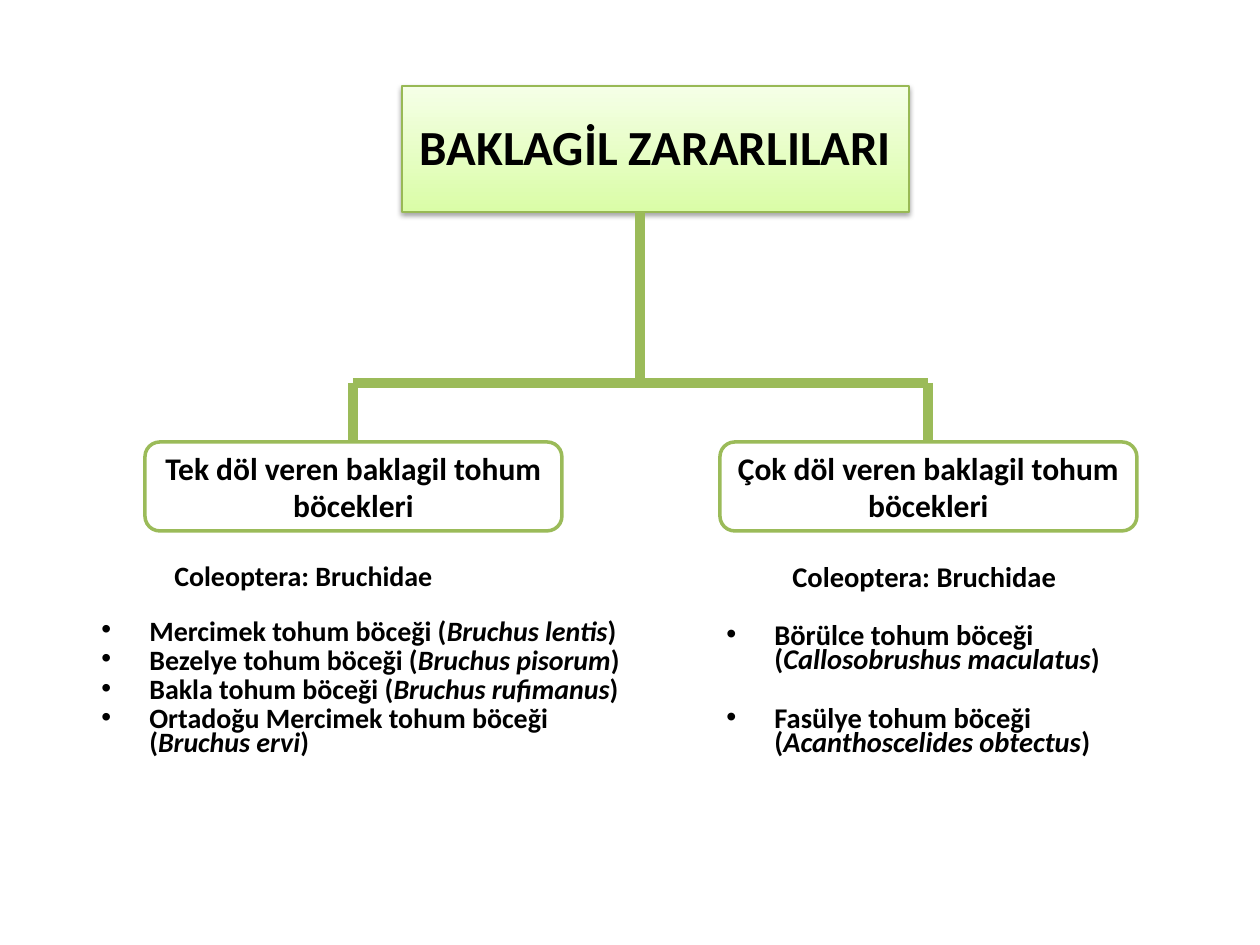
"""Builds a slide that sorts legume pests into two groups of seed beetles."""
from lxml import etree
from pptx import Presentation
from pptx import util as u
from pptx.dml.color import RGBColor
from pptx.enum import shapes, text
from pptx.oxml import ns

PX = 914400 // 126
FONT, BLACK, WHITE, GREEN = "Calibri", "000000", "FFFFFF", "9BBB59"
TITLE = "BAKLAGİL ZARARLILARI"
FAMILY = "Coleoptera: Bruchidae"
GROUPS = [
    {"name": "Tek döl veren baklagil tohum böcekleri",
     "center": 353, "list": (89, 562, 561, 268), "size": 16, "indent": 73,
     "first_gap": 17.7, "gap": 3.2,
     "pests": [("Mercimek tohum böceği", "Bruchus lentis"),
               ("Bezelye tohum böceği", "Bruchus pisorum"),
               ("Bakla tohum böceği", "Bruchus rufimanus"),
               ("Ortadoğu Mercimek tohum böceği", "Bruchus ervi")]},
    {"name": "Çok döl veren baklagil tohum böcekleri",
     "center": 928, "list": (714, 562, 501, 248), "size": 16.3, "indent": 66,
     "first_gap": 19.8, "gap": 19.8,
     "pests": [("Börülce tohum böceği", "Callosobrushus maculatus"),
               ("Fasülye tohum böceği", "Acanthoscelides obtectus")]},
]
FRAME = (402, 86, 507, 126)
TITLE_AREA = (402, 96, 507, 100)
TRUNK_X, BRANCH_Y = 640, 383
NAME_TOP, NAME_WIDTH, NAME_HEIGHT = 442, 417, 89
HANGING = 48


def px(*values):
    return [value * PX for value in values]


def color(value):
    return RGBColor.from_string(value)


def write(para, words, size, italic=False, align=None):
    span = para.add_run()
    span.text = words
    font = span.font
    font.name, font.size, font.bold, font.italic = FONT, u.Pt(size), True, italic
    font.color.rgb = color(BLACK)
    if align is not None:
        para.alignment = align


def add_effects(properties):
    return etree.SubElement(properties, ns.qn("a:effectLst"))


def add_frame(slide):
    frame = slide.shapes.add_shape(shapes.MSO_SHAPE.RECTANGLE, *px(*FRAME))
    frame.fill.gradient()
    frame.fill.gradient_angle = 90
    for stop, shade in zip(frame.fill.gradient_stops, ("DAFDA7", "F5FFE7")):
        stop.color.rgb = color(shade)
    for stop, position in zip(frame.fill.gradient_stops, (0, 1)):
        stop.position = position
    frame.line.color.rgb, frame.line.width = color("98B955"), u.Pt(0.75)
    shadow = etree.SubElement(add_effects(frame.element.spPr), ns.qn("a:outerShdw"),
                              blurRad=str(u.Pt(3.1)), dist=str(u.Pt(1.6)),
                              dir="5400000", rotWithShape="0")
    shade = etree.SubElement(shadow, ns.qn("a:srgbClr"), val=BLACK)
    etree.SubElement(shade, ns.qn("a:alpha"), val="38000")
    return frame


def add_title(slide):
    title = slide.shapes.title
    title.left, title.top, title.width, title.height = px(*TITLE_AREA)
    title.text_frame.auto_size = text.MSO_AUTO_SIZE.NONE
    title.text_frame.vertical_anchor = text.MSO_ANCHOR.MIDDLE
    write(title.text_frame.paragraphs[0], TITLE, 28, align=text.PP_ALIGN.CENTER)
    title.element.addprevious(add_frame(slide).element)


def add_line(slide, *ends):
    line = slide.shapes.add_connector(shapes.MSO_CONNECTOR.STRAIGHT, *px(*ends))
    line.line.color.rgb, line.line.width = color(GREEN), u.Pt(6)
    add_effects(line.element.spPr)


def add_name(slide, group):
    left = group["center"] - NAME_WIDTH // 2
    box = slide.shapes.add_shape(shapes.MSO_SHAPE.ROUNDED_RECTANGLE,
                                 *px(left, NAME_TOP, NAME_WIDTH, NAME_HEIGHT))
    box.shadow.inherit = False
    box.fill.solid()
    box.fill.fore_color.rgb = color(WHITE)
    box.line.color.rgb, box.line.width = color(GREEN), u.Pt(2)
    box.text_frame.word_wrap = True
    box.text_frame.vertical_anchor = text.MSO_ANCHOR.MIDDLE
    write(box.text_frame.paragraphs[0], group["name"], 18, align=text.PP_ALIGN.CENTER)


def set_spacing(para, before, left, first=0, bullet=None):
    para.line_spacing, para.space_before = 0.7, u.Pt(before)
    properties = para._p.get_or_add_pPr()
    properties.set("marL", str(left * PX))
    properties.set("indent", str(first * PX))
    if bullet:
        etree.SubElement(properties, ns.qn("a:buFont"), typeface="Arial")
        etree.SubElement(properties, ns.qn("a:buChar"), char=bullet)


def add_pests(slide, group):
    body = slide.shapes.add_textbox(*px(*group["list"])).text_frame
    body.word_wrap = True
    size = group["size"]
    heading = body.paragraphs[0]
    set_spacing(heading, size / 5, group["indent"])
    write(heading, FAMILY, size)
    for number, (pest, species) in enumerate(group["pests"]):
        para = body.add_paragraph()
        before = group["gap"] if number else group["first_gap"]
        set_spacing(para, before, HANGING, -HANGING, "•")
        write(para, f"{pest} (", size)
        write(para, species, size, italic=True)
        write(para, ")", size)


def main():
    deck = Presentation()
    deck.slide_width, deck.slide_height = u.Inches(10), u.Inches(7.5)
    slide = deck.slides.add_slide(deck.slide_layouts[5])
    add_title(slide)
    add_line(slide, TRUNK_X, FRAME[1] + FRAME[3], TRUNK_X, BRANCH_Y)
    for group in GROUPS:
        center = group["center"]
        add_line(slide, center, BRANCH_Y, TRUNK_X, BRANCH_Y)
        add_line(slide, center, BRANCH_Y, center, NAME_TOP)
        add_name(slide, group)
        add_pests(slide, group)
    deck.save("out.pptx")


if __name__ == "__main__":
    main()
